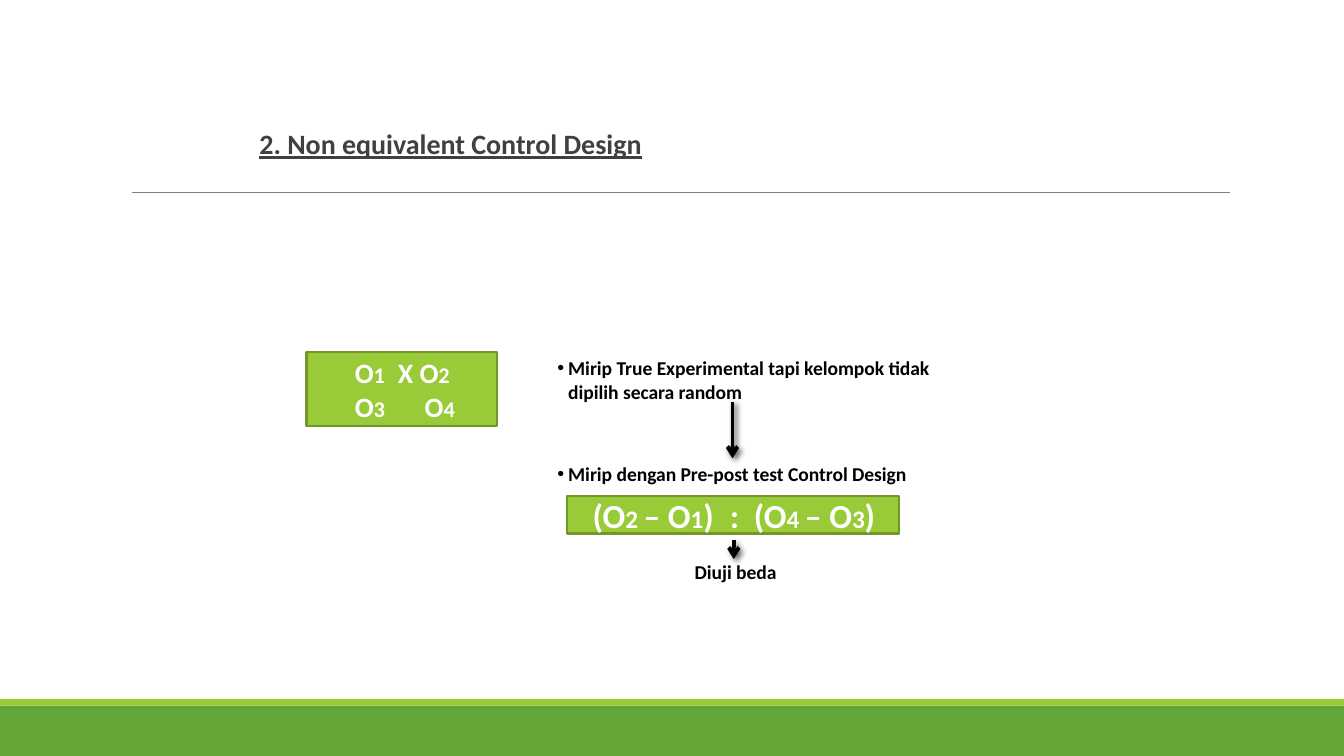
"""Build the Non equivalent Control Design slide."""
import pptx
import pptx.dml.color
import pptx.enum.shapes
import pptx.enum.text
import pptx.oxml
import pptx.oxml.ns
import pptx.util
from pptx.util import Inches, Pt

RGB = pptx.dml.color.RGBColor
GREEN, LIME, OLIVE = RGB(0x63, 0xA5, 0x37), RGB(0x99, 0xCB, 0x38), RGB(0x71, 0x96, 0x29)
GREY, DARK = RGB(0x80, 0x80, 0x80), RGB(0x40, 0x40, 0x40)
BLACK, WHITE = RGB(0, 0, 0), RGB(0xFF, 0xFF, 0xFF)

TITLE = "2. Non equivalent Control Design"
BANDS = [((0, 5.25, 10, 0.38), GREEN), ((0, 5.2, 10, 0.05), LIME)]
FORMULAS = [
    {"at": (2.28, 2.62, 1.42, 0.55),
     "lines": [["O", "1", "\tX O", "2"], ["O", "3", "\tO", "4"]],
     "sizes": (15, 12), "inset": 0.36, "tabs": [(0.32,), (0.52,)]},
    {"at": (4.22, 3.69, 2.47, 0.28),
     "lines": [["(O", "2 ", "– O", "1", ")\t:\t(O", "4 ", "– O", "3", ")"]],
     "sizes": (18, 13.5), "inset": 0.19, "tabs": [(1.02, 1.2)]},
]
NOTES = [
    ((5.07, 4.12, 0.84, 0.28), "Diuji beda", False),
    ((4.05, 2.6, 3.26, 0.45), "Mirip True Experimental tapi kelompok tidak dipilih secara random", True),
    ((4.05, 3.39, 3.26, 0.28), "Mirip dengan Pre-post test Control Design", True),
]
ARROWS = [(5.46, 4.02, 4.16), (5.45, 2.99, 3.41)]


def element(xml):
    return pptx.oxml.parse_xml(xml.replace(">", f" {pptx.oxml.ns.nsdecls('a')}>", 1))


def add_run(p, text, **format_values):
    r = p.add_run()
    r.text = text
    color = format_values.pop("color")
    for name, value in {"name": "Calibri", "bold": True, **format_values}.items():
        setattr(r.font, name, value)
    r.font.color.rgb = color


def add_rect(s, at, fill, line=None):
    sp = s.shapes.add_shape(pptx.enum.shapes.MSO_SHAPE.RECTANGLE, *map(Inches, at))
    sp.shadow.inherit = False
    sp.fill.solid()
    sp.fill.fore_color.rgb = fill
    if line is None:
        sp.line.fill.background()
    else:
        sp.line.color.rgb = line
        sp.line.width = Pt(1.25)
    return sp


def add_formula(s, at, lines, sizes, inset, tabs):
    tf = add_rect(s, at, LIME, OLIVE).text_frame
    tf.margin_left = Inches(inset)
    tf.vertical_anchor = pptx.enum.text.MSO_ANCHOR.MIDDLE
    for i, (line, stops) in enumerate(zip(lines, tabs)):
        p = tf.add_paragraph() if i else tf.paragraphs[0]
        p.alignment = pptx.enum.text.PP_ALIGN.LEFT
        marks = "".join(f'<a:tab pos="{Inches(x)}" algn="l"/>' for x in stops)
        p._p.get_or_add_pPr().append(element(f"<a:tabLst>{marks}</a:tabLst>"))
        for j, text in enumerate(line):
            add_run(p, text, size=Pt(sizes[j % 2]), color=WHITE)


def add_text(s, at, text, **format_values):
    tf = s.shapes.add_textbox(*map(Inches, at)).text_frame
    tf.word_wrap = True
    tf.auto_size = pptx.enum.text.MSO_AUTO_SIZE.SHAPE_TO_FIT_TEXT
    add_run(tf.paragraphs[0], text, **format_values)
    return tf


def add_line(s, start, end, color, width, arrow=False):
    sp = s.shapes.add_connector(
        pptx.enum.shapes.MSO_CONNECTOR.STRAIGHT, *map(Inches, start + end))
    sp.line.color.rgb = color
    sp.line.width = Pt(width)
    shadow = ""
    if arrow:
        sp.line._get_or_add_ln().append(element('<a:tailEnd type="arrow"></a:tailEnd>'))
        shadow = (f'<a:outerShdw blurRad="{Pt(3)}" dist="{Pt(2)}" dir="2700000">'
                  '<a:srgbClr val="000000"><a:alpha val="60000"/></a:srgbClr></a:outerShdw>')
    sp._element.spPr.append(element(f"<a:effectLst>{shadow}</a:effectLst>"))


def main():
    prs = pptx.Presentation()
    prs.slide_width = Inches(10)
    prs.slide_height = prs.slide_width * 9 // 16
    s = prs.slides.add_slide(prs.slide_layouts[6])
    for at, fill in BANDS:
        add_rect(s, at, fill)
    add_line(s, (0.98, 1.43), (9.15, 1.43), GREY, 0.5)

    tf = add_text(s, (1.93, 0.92, 6.08, 0.33), TITLE, size=Pt(15), color=DARK, underline=True)
    tf.margin_left = tf.margin_right = 0
    for name, value in {"line_spacing": 0.9, "space_before": Pt(9), "space_after": Pt(1.5)}.items():
        setattr(tf.paragraphs[0], name, value)

    for formula in FORMULAS:
        add_formula(s, **formula)
    for at, text, bulleted in NOTES:
        tf = add_text(s, at, text, size=Pt(10.5), color=BLACK)
        if bulleted:
            pPr = tf.paragraphs[0]._p.get_or_add_pPr()
            pPr.set("marL", str(Inches(0.08)))
            pPr.set("indent", str(Inches(-0.08)))
            pPr.append(element('<a:buFont typeface="Arial"></a:buFont>'))
            pPr.append(element('<a:buChar char="•"></a:buChar>'))
    for x, top, bottom in ARROWS:
        add_line(s, (x, top), (x, bottom), BLACK, 2, arrow=True)
    prs.save("out.pptx")


if __name__ == "__main__":
    main()
